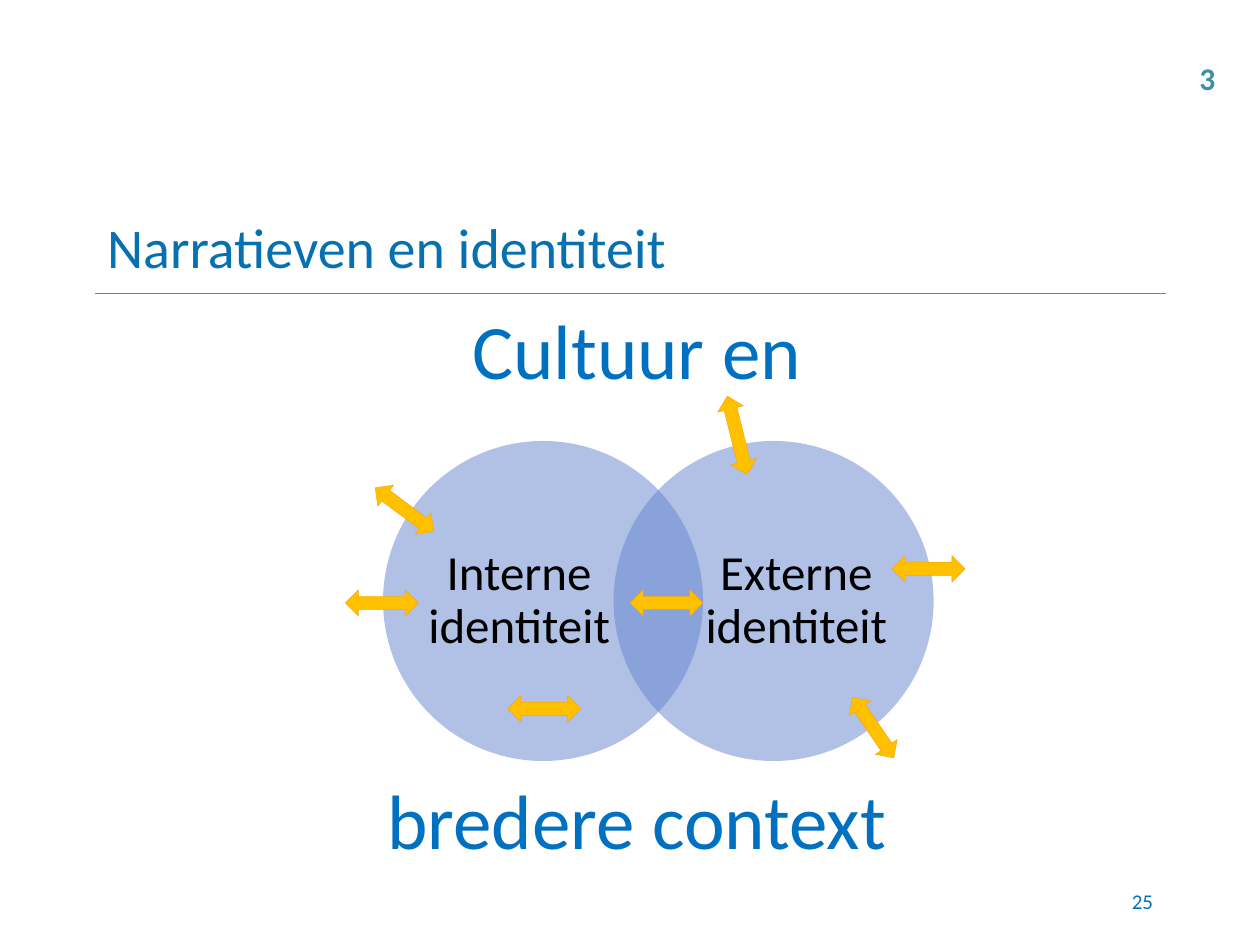
import pptx
import pptx.util
import pptx.dml.color
import pptx.enum.shapes
import pptx.enum.text
from lxml import etree

Inches, Pt = pptx.util.Inches, pptx.util.Pt
Shape = pptx.enum.shapes.MSO_SHAPE
Anchor = pptx.enum.text.MSO_ANCHOR
Align = pptx.enum.text.PP_ALIGN

COLORS = {"title": "0770B1", "context": "0070C0", "rule": "0BA7DF",
          "circle": "6585CF", "label": "000000", "arrow": "FFC000",
          "arrow_edge": "F9A307", "chapter": "3E8EA9"}

TITLE = "Narratieven en identiteit"
CONTEXT = [("Cultuur en", 2.35), ("bredere context", 6.08)]  # text, top
CIRCLES = [("Interne identiteit", 3.04, 3.39),  # text, circle left, label left
           ("Externe identiteit", 4.87, 5.59)]
CIRCLE_TOP, DIAMETER = 3.5, 2.54
LABEL_WIDTH, LABEL_HEIGHT = 1.46, 1.94
ARROWS = [  # left, top, width, rotation
    (2.74, 4.68, 0.58, 0), (5.53, 3.35, 0.64, 76), (4.03, 5.52, 0.58, 0),
    (6.64, 5.67, 0.58, 55.7), (7.08, 4.41, 0.58, 0),
    (2.92, 3.94, 0.58, 36.7), (5, 4.68, 0.58, 0)]
ARROW_HEIGHT = 0.21


def rgb(name):
    return pptx.dml.color.RGBColor.from_string(COLORS[name])


def inches(*lengths):
    return [Inches(length) for length in lengths]


def write(box, text, size, color, align=Align.LEFT, anchor=Anchor.TOP,
          bold=False, wrap=True, margin=None, spacing=None):
    frame = box.text_frame
    frame.word_wrap = wrap
    frame.vertical_anchor = anchor
    if margin is not None:
        frame.margin_left = frame.margin_right = Inches(margin)
        frame.margin_top = frame.margin_bottom = Inches(margin)
    para = frame.paragraphs[0]
    para.alignment = align
    para.line_spacing = spacing
    span = para.add_run()
    span.text = text
    span.font.name = "Calibri"
    span.font.size = Pt(size)
    span.font.bold = bold
    span.font.color.rgb = rgb(color)


def add_filled(page, kind, place, color):
    shape = page.shapes.add_shape(kind, *inches(*place))
    shape.shadow.inherit = False
    shape.fill.solid()
    shape.fill.fore_color.rgb = rgb(color)
    return shape


def set_opacity(shape, percent):
    color = shape.fill._xPr.find(".//" + pptx.oxml.ns.qn("a:srgbClr"))
    alpha = etree.SubElement(color, pptx.oxml.ns.qn("a:alpha"))
    alpha.set("val", str(percent * 1000))


def main():
    deck = pptx.Presentation()
    deck.slide_width, deck.slide_height = inches(10, 7.5)
    page = deck.slides.add_slide(deck.slide_layouts[5])
    shapes = page.shapes

    # Title and the rule under it
    title = shapes.title
    title.left, title.top, title.width, title.height = inches(0.75, 1.58, 8.5, 0.75)
    write(title, TITLE, 32, "title", anchor=Anchor.MIDDLE)
    rule = shapes.add_connector(pptx.enum.shapes.MSO_CONNECTOR.STRAIGHT,
                                *inches(0.75, 2.33, 9.25, 2.33))
    rule.line.color.rgb = rgb("rule")
    rule.line.width = Pt(0.75)
    etree.SubElement(rule._element.spPr, pptx.oxml.ns.qn("a:effectLst"))

    # Context above and below the circles
    for text, top in CONTEXT:
        box = shapes.add_textbox(*inches(0.75, top, 8.61, 0.84))
        write(box, text, 44, "context", align=Align.CENTER)

    # Overlapping circles with their labels
    label_top = CIRCLE_TOP + (DIAMETER - LABEL_HEIGHT) / 2
    for text, left, label_left in CIRCLES:
        circle = add_filled(page, Shape.OVAL,
                            (left, CIRCLE_TOP, DIAMETER, DIAMETER), "circle")
        circle.line.fill.background()
        set_opacity(circle, 50)
        label = shapes.add_textbox(
            *inches(label_left, label_top, LABEL_WIDTH, LABEL_HEIGHT))
        write(label, text, 28, "label", align=Align.CENTER,
              anchor=Anchor.MIDDLE, margin=0, spacing=0.9)

    # Exchange arrows
    for left, top, width, rotation in ARROWS:
        arrow = add_filled(page, Shape.LEFT_RIGHT_ARROW,
                           (left, top, width, ARROW_HEIGHT), "arrow")
        arrow.line.color.rgb = rgb("arrow_edge")
        arrow.line.width = Pt(0.25)
        arrow.rotation = rotation

    # Page number and chapter number
    number = shapes.add_textbox(*inches(7.17, 6.95, 2.08, 0.4))
    write(number, "25", 12, "title", align=Align.RIGHT, anchor=Anchor.MIDDLE)
    chapter = shapes.add_textbox(*inches(9.42, 0.42, 0.33, 0.4))
    write(chapter, "3", 18, "chapter", bold=True, wrap=False)

    deck.save("out.pptx")


if __name__ == "__main__":
    main()
